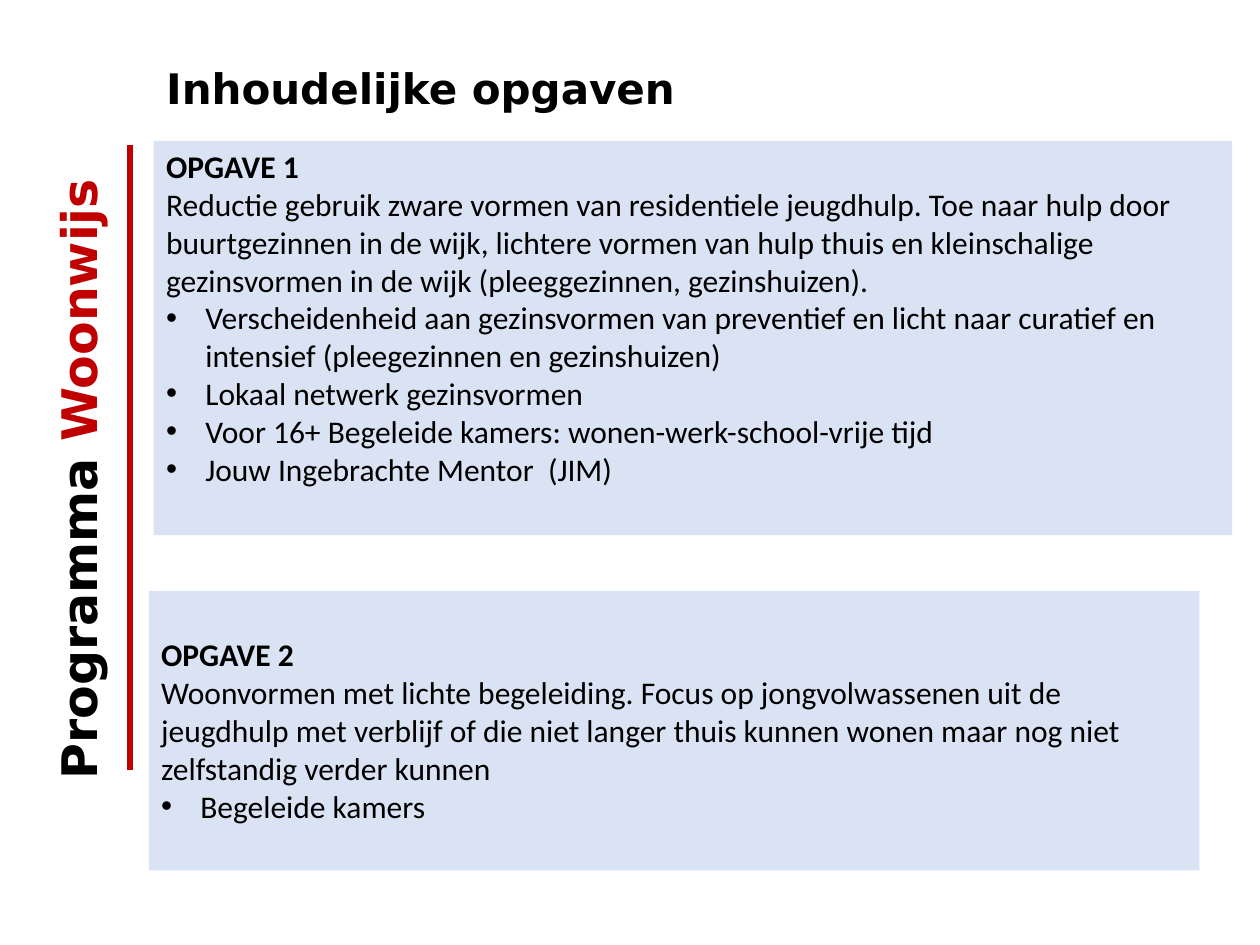
import pptx
import pptx.dml.color
import pptx.enum.shapes
import pptx.enum.text
import pptx.oxml.ns
import pptx.util
from lxml import etree

Cm = pptx.util.Cm
ALIGN = pptx.enum.text.PP_ALIGN
ANCHOR = pptx.enum.text.MSO_ANCHOR

COLOURS = {"white": "FFFFFF", "text": "000000", "accent": "C00000", "panel": "DAE3F3"}
HEADING = {"name": "DejaVu Sans", "bold": True}
BODY = {"name": "Calibri", "bold": False, "size": pptx.util.Pt(18)}
BULLET_INDENT = Cm(0.79)


def colour(name):
    return pptx.dml.color.RGBColor.from_string(COLOURS[name])


class SlideBuilder:
    """Holds the current slide and draws its elements in the house style."""

    def __init__(self, slide):
        self.slide = slide

    def box(self, left, top, width, height, fill, anchor=ANCHOR.TOP):
        box = self.slide.shapes.add_shape(
            pptx.enum.shapes.MSO_SHAPE.RECTANGLE, Cm(left), Cm(top), Cm(width), Cm(height))
        box.shadow.inherit = False
        box.fill.solid()
        box.fill.fore_color.rgb = colour(fill)
        box.line.fill.background()
        box.text_frame.word_wrap = True
        box.text_frame.vertical_anchor = anchor
        return box

    def span(self, para, text, style, colour_name="text"):
        span = para.add_run()
        span.text = text
        for key, value in style.items():
            setattr(span.font, key, value)
        span.font.color.rgb = colour(colour_name)

    def heading(self, box, parts, size, align=ALIGN.LEFT):
        para = box.text_frame.paragraphs[0]
        para.alignment = align
        for text, colour_name in parts:
            self.span(para, text, {**HEADING, "size": pptx.util.Pt(size)}, colour_name)

    def bullet(self, para):
        properties = para._p.get_or_add_pPr()
        properties.set("marL", str(BULLET_INDENT))
        properties.set("indent", str(-BULLET_INDENT))
        for tag, key, value in (("a:buFont", "typeface", "Arial"), ("a:buChar", "char", "•")):
            etree.SubElement(properties, pptx.oxml.ns.qn(tag)).set(key, value)

    def panel(self, place, title, intro, bullets, top_margin=0.13):
        frame = self.box(*place, "panel").text_frame
        frame.margin_top = Cm(top_margin)
        for index, text in enumerate([title, intro, *bullets]):
            para = frame.add_paragraph() if index else frame.paragraphs[0]
            para.alignment = ALIGN.LEFT
            if index > 1:
                self.bullet(para)
            self.span(para, text, {**BODY, "bold": index == 0})

    def rule(self, x, top, bottom):
        line = self.slide.shapes.add_connector(
            pptx.enum.shapes.MSO_CONNECTOR.STRAIGHT, Cm(x), Cm(top), Cm(x), Cm(bottom))
        line.line.color.rgb = colour("accent")
        line.line.width = pptx.util.Pt(3)
        etree.SubElement(line._element.spPr, pptx.oxml.ns.qn("a:effectLst"))


def main():
    deck = pptx.Presentation()
    deck.slide_width, deck.slide_height = Cm(25.4), Cm(19.05)
    page = SlideBuilder(deck.slides.add_slide(deck.slide_layouts[6]))

    # Programme name along the left edge
    programme = page.box(-5.84, 8.76, 14.81, 1.8, "white", ANCHOR.MIDDLE)
    programme.rotation = 270
    page.heading(programme, [("Programma ", "text"), ("Woonwijs", "accent")], 28, ALIGN.CENTER)

    # Slide title and red rule
    title = page.box(3.1, 1.14, 16.43, 1.27, "white")
    page.heading(title, [("Inhoudelijke opgaven", "text")], 24)
    page.rule(2.62, 2.92, 15.52)

    # The two assignments
    page.panel(
        (3.1, 2.84, 21.74, 7.95),
        "OPGAVE 1",
        "Reductie gebruik zware vormen van residentiele jeugdhulp. Toe naar hulp door "
        "buurtgezinnen in de wijk, lichtere vormen van hulp thuis en kleinschalige "
        "gezinsvormen in de wijk (pleeggezinnen, gezinshuizen).",
        ["Verscheidenheid aan gezinsvormen van preventief en licht naar curatief en "
         "intensief (pleegezinnen en gezinshuizen)",
         "Lokaal netwerk gezinsvormen",
         "Voor 16+ Begeleide kamers: wonen-werk-school-vrije tijd",
         "Jouw Ingebrachte Mentor  (JIM)"])
    page.panel(
        (3, 11.91, 21.18, 5.64),
        "OPGAVE 2",
        "Woonvormen met lichte begeleiding. Focus op jongvolwassenen uit de jeugdhulp "
        "met verblijf of die niet langer thuis kunnen wonen maar nog niet zelfstandig "
        "verder kunnen",
        ["Begeleide kamers"],
        top_margin=0.9)

    deck.save("out.pptx")


if __name__ == "__main__":
    main()
